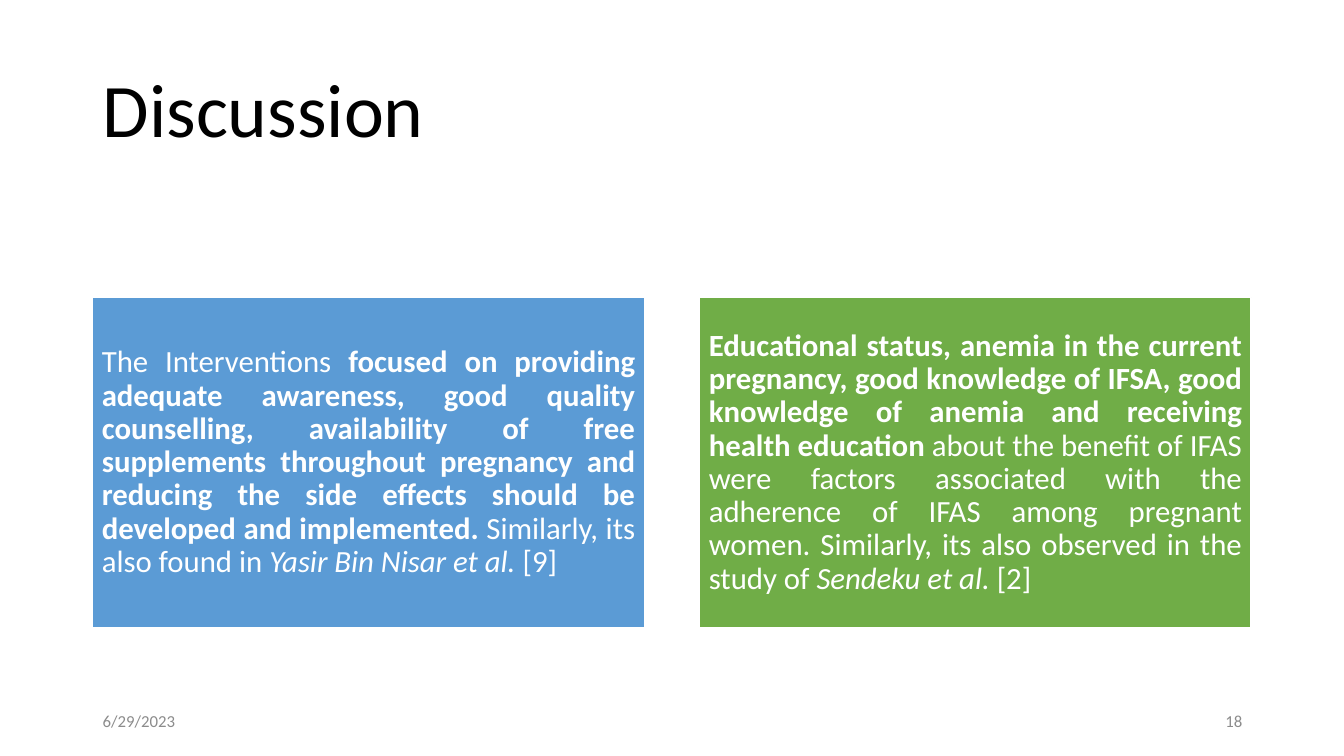
"""Build the Discussion slide with two coloured findings panels."""
from dataclasses import dataclass

from pptx import Presentation
from pptx.dml.color import RGBColor
from pptx.enum.shapes import MSO_SHAPE
from pptx.enum.text import MSO_ANCHOR, PP_ALIGN
from pptx.shapes.autoshape import Shape
from pptx.slide import Slide
from pptx.util import Inches, Pt

BLACK = RGBColor(0x00, 0x00, 0x00)
WHITE = RGBColor(0xFF, 0xFF, 0xFF)
GREY = RGBColor(0x8C, 0x8C, 0x8C)
BLUE = RGBColor(0x5B, 0x9B, 0xD5)
GREEN = RGBColor(0x70, 0xAD, 0x47)

FONT = "Calibri"
MARGIN = 0.92
PANEL_TOP, PANEL_WIDTH, PANEL_HEIGHT = 2.95, 5.47, 3.28
PANEL_STEP = 6.02
PANEL_INSET = 0.09


@dataclass(frozen=True)
class Span:
    text: str
    bold: bool = False
    italic: bool = False


@dataclass(frozen=True)
class Style:
    size: float
    color: RGBColor
    alignment: PP_ALIGN = PP_ALIGN.LEFT
    line_spacing: float = 1.0
    space_after: float = 0


@dataclass(frozen=True)
class Label:
    text: str
    left: float
    top: float
    width: float
    height: float
    style: Style


@dataclass(frozen=True)
class Panel:
    fill: RGBColor
    spans: tuple[Span, ...]


PANEL_STYLE = Style(22, WHITE, PP_ALIGN.JUSTIFY, 0.9, 7.7)

LABELS = (
    Label("Discussion", MARGIN, 0.4, 11.5, 1.45, Style(54, BLACK, line_spacing=0.9)),
    Label("6/29/2023", MARGIN, 6.95, 3, 0.4, Style(12, GREY, space_after=6)),
    Label("18", 9.42, 6.95, 3, 0.4, Style(12, GREY, PP_ALIGN.RIGHT, space_after=6)),
)

PANELS = (
    Panel(BLUE, (
        Span("The Interventions "),
        Span("focused on providing adequate awareness, good quality counselling, "
             "availability of free supplements throughout pregnancy and reducing "
             "the side effects should be developed and implemented. ", bold=True),
        Span("Similarly, its also found in "),
        Span("Yasir Bin Nisar et al. ", italic=True),
        Span("[9]"),
    )),
    Panel(GREEN, (
        Span("Educational status, anemia in the current pregnancy, good knowledge "
             "of IFSA, good knowledge of anemia and receiving health education ",
             bold=True),
        Span("about the benefit of IFAS were factors associated with the adherence "
             "of IFAS among pregnant women. Similarly, its also observed in the "
             "study of "),
        Span("Sendeku et al.", italic=True),
        Span(" [2]"),
    )),
)


def write_text(shape: Shape, spans: tuple[Span, ...], style: Style) -> None:
    """Fill a shape with one paragraph of formatted spans."""
    text_frame = shape.text_frame
    text_frame.word_wrap = True
    text_frame.vertical_anchor = MSO_ANCHOR.MIDDLE
    paragraph = text_frame.paragraphs[0]
    paragraph.alignment = style.alignment
    paragraph.line_spacing = style.line_spacing
    paragraph.space_after = Pt(style.space_after)
    for span in spans:
        run = paragraph.add_run()
        run.text = span.text
        run.font.name = FONT
        run.font.size = Pt(style.size)
        run.font.color.rgb = style.color
        run.font.bold = span.bold
        run.font.italic = span.italic


def add_label(slide: Slide, label: Label) -> None:
    """Add a plain text box."""
    shape = slide.shapes.add_textbox(
        Inches(label.left), Inches(label.top), Inches(label.width), Inches(label.height))
    write_text(shape, (Span(label.text),), label.style)


def add_panel(slide: Slide, panel: Panel, column: int) -> None:
    """Add a filled rectangle with justified text in the given column."""
    shape = slide.shapes.add_shape(
        MSO_SHAPE.RECTANGLE, Inches(MARGIN + column * PANEL_STEP), Inches(PANEL_TOP),
        Inches(PANEL_WIDTH), Inches(PANEL_HEIGHT))
    shape.shadow.inherit = False
    shape.fill.solid()
    shape.fill.fore_color.rgb = panel.fill
    shape.line.color.rgb = WHITE
    shape.line.width = Pt(1)
    text_frame = shape.text_frame
    text_frame.margin_left = text_frame.margin_right = Inches(PANEL_INSET)
    text_frame.margin_top = text_frame.margin_bottom = Inches(PANEL_INSET)
    write_text(shape, panel.spans, PANEL_STYLE)


def main() -> None:
    """Create and save the presentation."""
    presentation = Presentation()
    presentation.slide_width = Inches(13.33)
    presentation.slide_height = Inches(7.5)
    slide = presentation.slides.add_slide(presentation.slide_layouts[6])
    for label in LABELS:
        add_label(slide, label)
    for column, panel in enumerate(PANELS):
        add_panel(slide, panel, column)
    presentation.save("out.pptx")


if __name__ == "__main__":
    main()
